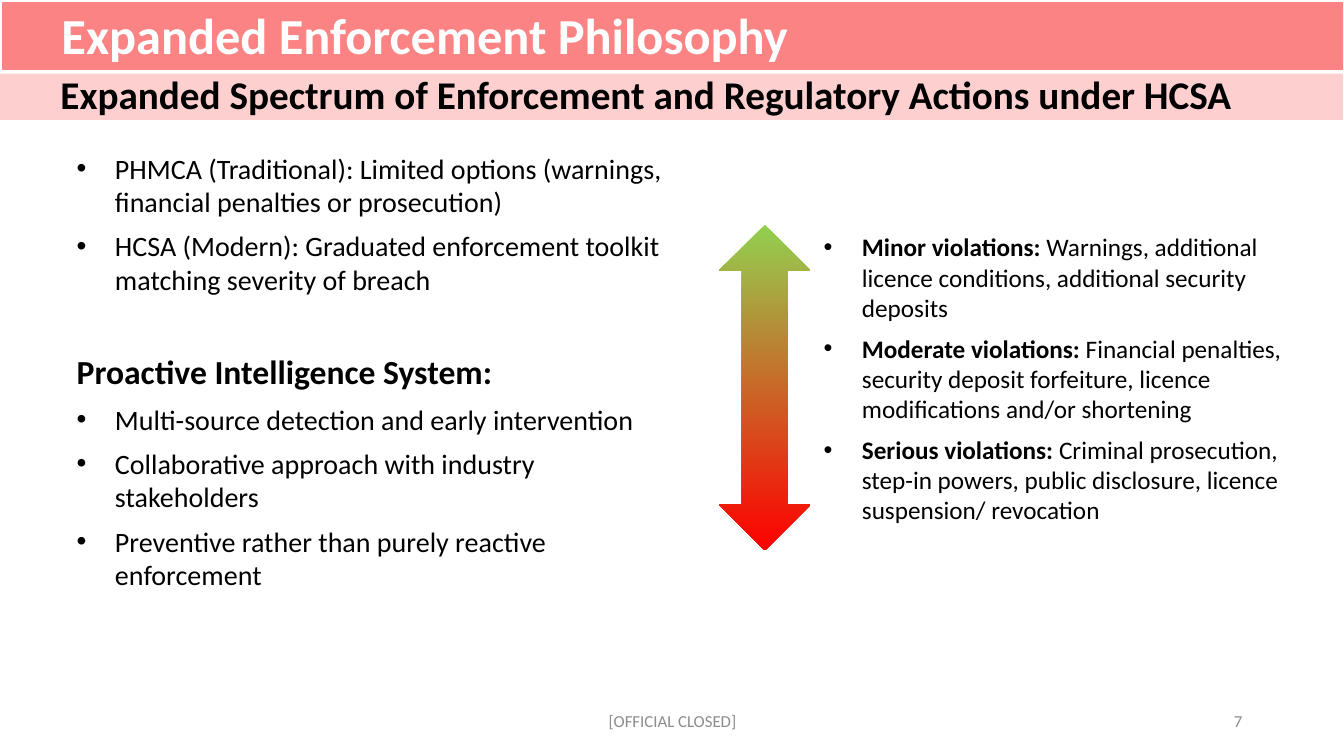
import pptx
import pptx.dml.color
import pptx.enum.shapes
import pptx.enum.text
import pptx.oxml
import pptx.oxml.ns
import pptx.util
from pptx.util import Inches

ALIGN = pptx.enum.text.PP_ALIGN
ANCHOR = pptx.enum.text.MSO_ANCHOR

THEME = {
    "font": "Calibri",
    "color": {"ink": "000000", "white": "FFFFFF", "grey": "8C8C8C", "rose": "FB8383",
              "blush": "FDCFCF", "green": "92D050", "red": "FF0000"},
    "size": {"title": 36, "band": 28, "head": 24, "body": 20, "list": 18, "foot": 12},
}

OPTIONS = [
    "PHMCA (Traditional): Limited options (warnings, financial penalties or prosecution)",
    "HCSA (Modern): Graduated enforcement toolkit matching severity of breach",
]
SYSTEM = [
    "Multi-source detection and early intervention",
    "Collaborative approach with industry stakeholders",
    "Preventive rather than purely reactive enforcement",
]
LEVELS = [
    ("Minor violations:",
     " Warnings, additional licence conditions, additional security deposits"),
    ("Moderate violations:",
     " Financial penalties, security deposit forfeiture, licence modifications and/or shortening"),
    ("Serious violations:",
     " Criminal prosecution, step-in powers, public disclosure, licence suspension/ revocation"),
]


def rgb(name):
    return pptx.dml.color.RGBColor.from_string(THEME["color"][name])


def apply(target, values):
    for name, value in values.items():
        setattr(target, name, value)


def add_xml(parent, tag, attrs, inner=""):
    """Append one drawing element to the parent."""
    marks = " ".join(f'{name}="{value}"' for name, value in attrs.items())
    space = pptx.oxml.ns.nsdecls("a")
    parent.append(pptx.oxml.parse_xml(f"<a:{tag} {space} {marks}>{inner}</a:{tag}>"))


def add_run(para, text, size, color="ink", bold=False):
    run = para.add_run()
    run.text = text
    apply(run.font, {"name": THEME["font"], "bold": bold,
                     "size": pptx.util.Pt(THEME["size"][size])})
    run.font.color.rgb = rgb(color)


def add_box(slide, left, top, width, height, **frame):
    """Add a wrapping text box and return its text frame."""
    box = slide.shapes.add_textbox(*map(Inches, (left, top, width, height)))
    apply(box.text_frame, {"word_wrap": True, **frame})
    return box.text_frame


def add_para(frame, gap=7.5):
    """Return the empty first paragraph, or a new one below the last."""
    first = frame.paragraphs[0]
    para = frame.add_paragraph() if first.runs else first
    para.space_before = pptx.util.Pt(gap)
    return para


def add_bullet(frame, size, text, lead=""):
    para = add_para(frame)
    props = para._p.get_or_add_pPr()
    props.set("marL", str(Inches(0.38)))
    props.set("indent", str(Inches(-0.38)))
    add_xml(props, "buFont", {"typeface": "Arial"})
    add_xml(props, "buChar", {"char": "•"})
    if lead:
        add_run(para, lead, size, bold=True)
    add_run(para, text, size)


def add_title(slide, text):
    place = map(Inches, (0.01, 0.01, 13.32, 0.7))
    cell = slide.shapes.add_table(1, 1, *place).table.cell(0, 0)
    line = f'<a:solidFill><a:srgbClr val="{THEME["color"]["white"]}"/></a:solidFill>'
    for side, width in (("lnL", 1), ("lnR", 1), ("lnT", 1), ("lnB", 3)):
        add_xml(cell._tc.get_or_add_tcPr(), side, {"w": int(pptx.util.Pt(width))}, line)
    cell.fill.solid()
    cell.fill.fore_color.rgb = rgb("rose")
    cell.margin_left = Inches(0.6)
    add_run(cell.text_frame.paragraphs[0], text, "title", "white", True)


def add_shape(slide, kind, left, top, width, height):
    shape = slide.shapes.add_shape(kind, *map(Inches, (left, top, width, height)))
    shape.shadow.inherit = False
    shape.line.fill.background()
    return shape


def add_band(slide, text):
    band = add_shape(slide, pptx.enum.shapes.MSO_SHAPE.RECTANGLE, 0, 0.73, 13.32, 0.46)
    band.fill.solid()
    band.fill.fore_color.rgb = rgb("blush")
    apply(band.text_frame, {"margin_left": Inches(0.6), "word_wrap": True,
                            "vertical_anchor": ANCHOR.MIDDLE})
    para = band.text_frame.paragraphs[0]
    apply(para, {"alignment": ALIGN.LEFT, "line_spacing": 0.9})
    add_run(para, text, "band", bold=True)


def add_arrow(slide):
    arrow = add_shape(slide, pptx.enum.shapes.MSO_SHAPE.LEFT_RIGHT_ARROW,
                      5.97, 3.39, 3.23, 0.91)
    arrow.rotation = 90
    arrow.fill.gradient()
    arrow.fill.gradient_angle = 0
    for stop, place, name in zip(arrow.fill.gradient_stops, (0, 1), ("green", "red")):
        stop.position = place
        stop.color.rgb = rgb(name)


def add_foot(slide, left, width, text, align):
    frame = add_box(slide, left, 6.95, width, 0.4, vertical_anchor=ANCHOR.MIDDLE)
    frame.paragraphs[0].alignment = align
    add_run(frame.paragraphs[0], text, "foot", "grey")


def main():
    deck = pptx.Presentation()
    apply(deck, {"slide_width": Inches(13.33), "slide_height": Inches(7.5)})
    slide = deck.slides.add_slide(deck.slide_layouts[6])

    add_band(slide, "Expanded Spectrum of Enforcement and Regulatory Actions under HCSA")
    sides = ("left", "top", "right", "bottom")
    inset = {"margin_" + side: Inches(0.14) for side in sides}
    left = add_box(slide, 0.62, 1.36, 6.19, 5.3, **inset)
    for text in OPTIONS:
        add_bullet(left, "body", text)
    add_run(add_para(left, 39.4), "Proactive Intelligence System:", "head", bold=True)
    for text in SYSTEM:
        add_bullet(left, "body", text)

    add_title(slide, "Expanded Enforcement Philosophy")
    add_foot(slide, 4.42, 4.5, "[OFFICIAL CLOSED]", ALIGN.CENTER)
    add_foot(slide, 9.42, 3, "7", ALIGN.RIGHT)
    add_arrow(slide)
    right = add_box(slide, 8.07, 2.25, 4.88, 3.05)
    for lead, text in LEVELS:
        add_bullet(right, "list", text, lead)
    deck.save("out.pptx")


if __name__ == "__main__":
    main()
